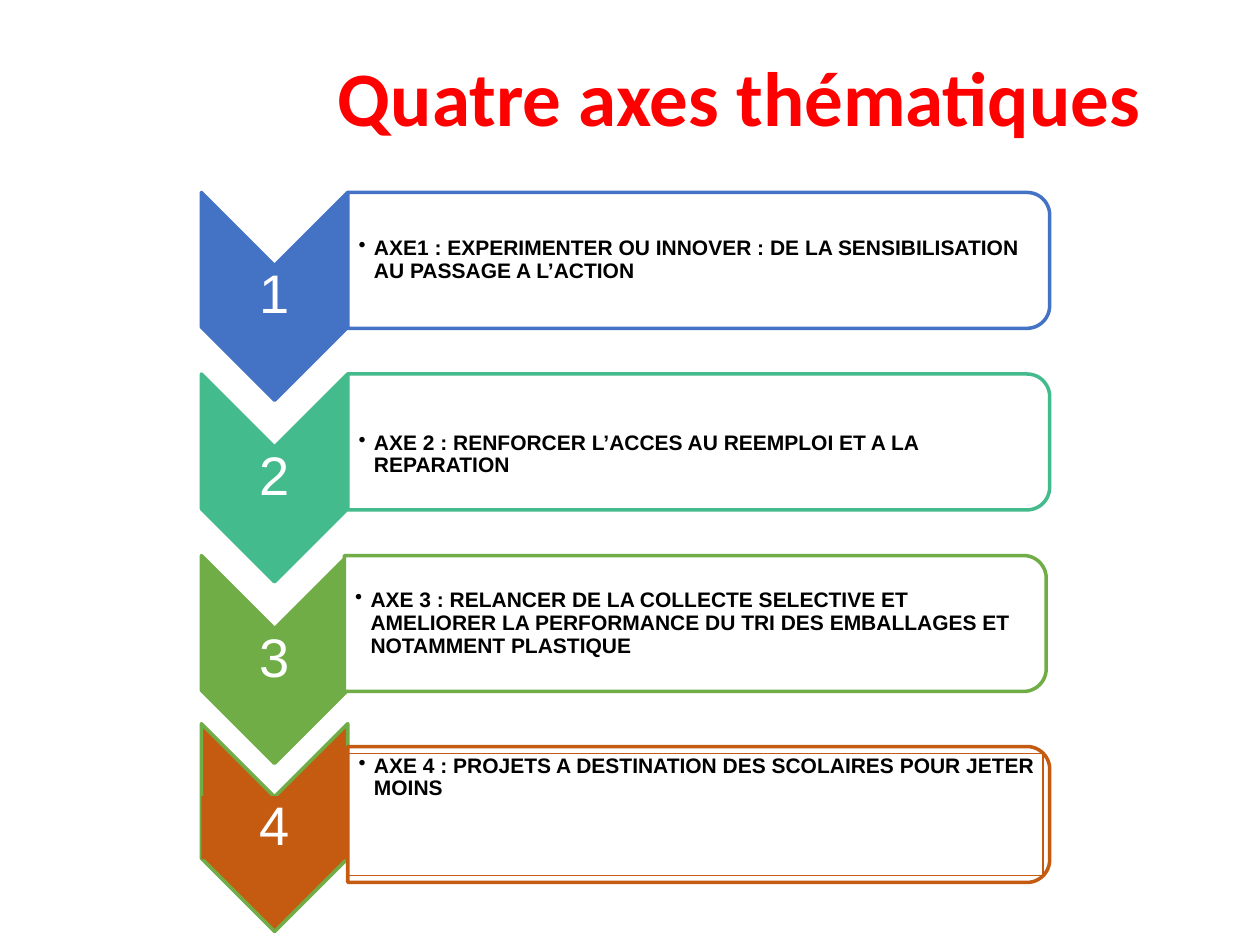
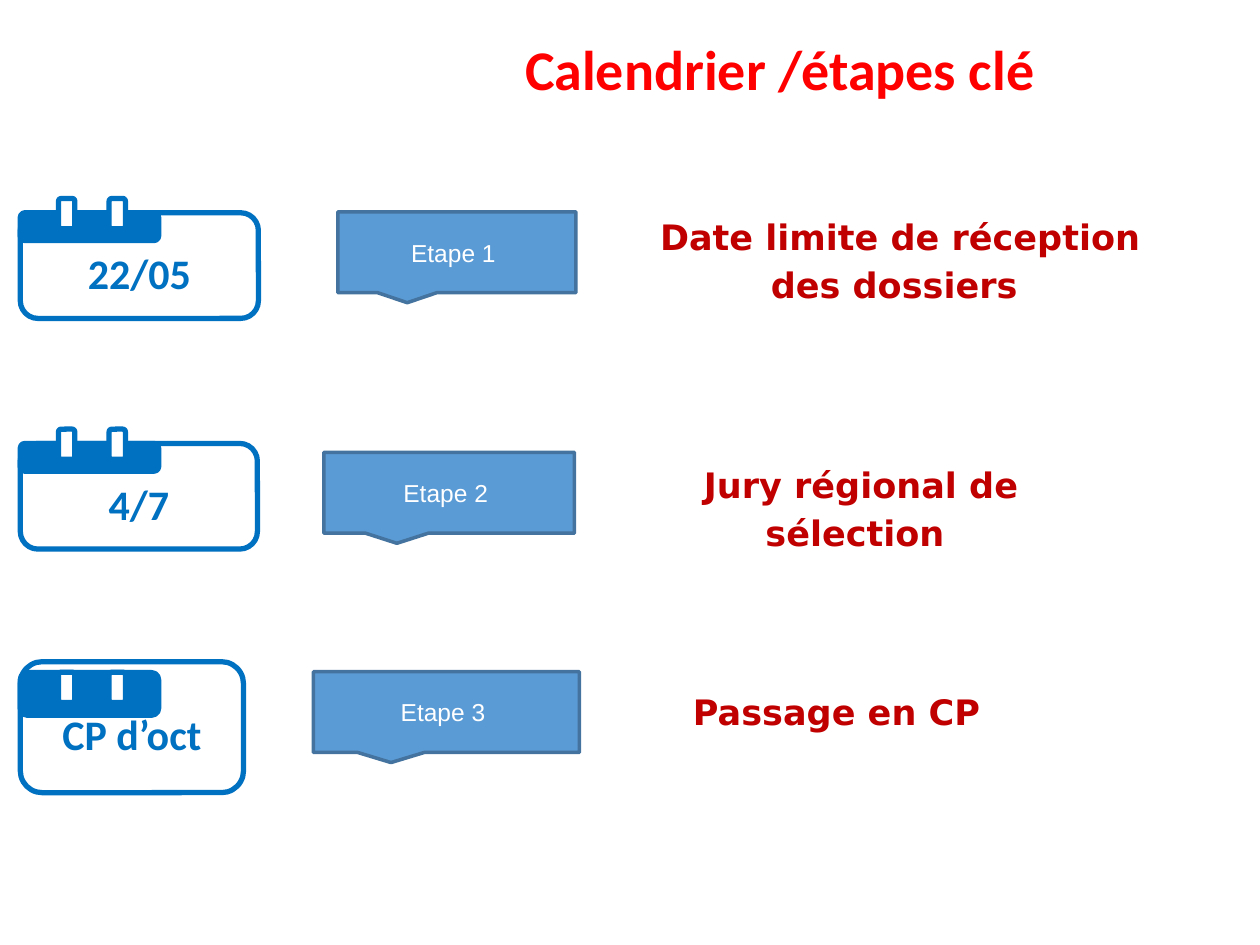
from dataclasses import dataclass
from typing import Optional

from lxml import etree
from pptx import Presentation
from pptx import util as u
from pptx.dml import color as dml
from pptx.enum import shapes, text
from pptx.oxml import ns

COLORS = {
    "title": "FF0000", "white": "FFFFFF", "black": "000000",
    "blue": "4472C4", "teal": "43BB8D", "green": "70AD47", "orange": "C55A11",
    "calendar": "0070C0", "step": "5B9BD5", "step_line": "43739E",
    "description": "C00000",
}
SHAPE = shapes.MSO_SHAPE
LEFT, CENTER = text.PP_ALIGN.LEFT, text.PP_ALIGN.CENTER
TOP, MIDDLE = text.MSO_ANCHOR.TOP, text.MSO_ANCHOR.MIDDLE


@dataclass
class Box:
    """Visible frame, in centimetres."""
    left: float
    top: float
    width: float
    height: float


@dataclass
class Style:
    size: float
    font: str
    color: str
    bold: bool = False
    align: text.PP_ALIGN = CENTER
    anchor: text.MSO_ANCHOR = MIDDLE
    spacing: float = 1.0
    insets: tuple = (0.25, 0.13, 0.25, 0.13)


@dataclass
class Axis:
    number: str
    label: str
    color: str
    outline: str
    chevron_top: float
    card_top: float
    card_left: float = 7.01
    label_anchor: text.MSO_ANCHOR = MIDDLE
    label_inset: float = 0.03
    framed: bool = False


@dataclass
class Step:
    date: str
    name: str
    description: str
    page: Box
    header_top: float
    header_height: float
    tab_top: float
    callout: Box
    description_box: Box
    align: text.PP_ALIGN = CENTER
    spacing: float = 1.15


NUMBER = Style(31, "Arial", "white", spacing=0.9, insets=(0.05,) * 4)
DATE = Style(24, "Calibri", "calendar", True, insets=(0.1, 0.41, 0.1, 0.13))
STEP_NAME = Style(14, "Arial", "white")

FIRST_TOP, PITCH = 3.88, 3.66
TOPS = [FIRST_TOP + PITCH * row for row in range(3)]
AXES = [
    Axis("1", "AXE1 : EXPERIMENTER OU INNOVER : DE LA SENSIBILISATION AU PASSAGE A L’ACTION",
         "blue", "blue", TOPS[0], TOPS[0]),
    Axis("2", "AXE 2 : RENFORCER L’ACCES AU REEMPLOI ET A LA REPARATION",
         "teal", "teal", TOPS[1], TOPS[1], label_inset=0.55),
    Axis("3", "AXE 3 : RELANCER DE LA COLLECTE SELECTIVE ET AMELIORER LA PERFORMANCE "
         "DU TRI DES EMBALLAGES ET NOTAMMENT PLASTIQUE",
         "green", "green", TOPS[2], TOPS[2], card_left=6.94),
    Axis("4", "AXE 4 : PROJETS A DESTINATION DES SCOLAIRES POUR JETER MOINS",
         "orange", "green", 14.59, 15.05, label_anchor=TOP, framed=True),
]
STEPS = [
    Step("22/05", "Etape 1 ", "Date limite de réception des dossiers ",
         Box(0.41, 4.29, 4.8, 2.13), 4.29, 0.56, 4.0,
         Box(6.81, 4.27, 4.8, 1.63), Box(12.27, 4.09, 11.76, 2.13)),
    Step("4/7", "Etape 2 ", "Jury régional de sélection ",
         Box(0.41, 8.94, 4.78, 2.13), 8.94, 0.56, 8.65,
         Box(6.53, 9.12, 5.05, 1.63), Box(12.42, 9.09, 9.88, 2.13)),
    Step("CP d’oct", "Etape 3 ", "Passage en CP",
         Box(0.41, 13.34, 4.5, 2.64), 13.56, 0.86, 13.55,
         Box(6.32, 13.54, 5.36, 1.63), Box(13.72, 13.79, 6.93, 1.12), LEFT, 1.0),
]


def rgb(name: str) -> dml.RGBColor:
    return dml.RGBColor.from_string(COLORS[name])


def write(shape, words: str, style: Style):
    """Fill a shape with one styled paragraph and return the paragraph."""
    frame = shape.text_frame
    frame.word_wrap = True
    frame.vertical_anchor = style.anchor
    (frame.margin_left, frame.margin_top,
     frame.margin_right, frame.margin_bottom) = map(u.Cm, style.insets)
    paragraph = frame.paragraphs[0]
    paragraph.alignment = style.align
    paragraph.line_spacing = style.spacing
    run = paragraph.add_run()
    run.text = words
    run.font.size = u.Pt(style.size)
    run.font.name = style.font
    run.font.bold = style.bold
    run.font.color.rgb = rgb(style.color)
    return paragraph


def add_text(slide, box: Box, words: str, style: Style):
    shape = slide.shapes.add_textbox(
        u.Cm(box.left), u.Cm(box.top), u.Cm(box.width), u.Cm(box.height))
    return write(shape, words, style)


def add_shape(slide, kind, box: Box, fill: Optional[str], line: Optional[str],
              weight: float = 2, rotation: int = 0):
    """Draw a preset shape; quarter turns keep the visible frame."""
    width, height = (box.height, box.width) if rotation else (box.width, box.height)
    left = box.left + (box.width - width) / 2
    top = box.top + (box.height - height) / 2
    shape = slide.shapes.add_shape(kind, u.Cm(left), u.Cm(top), u.Cm(width), u.Cm(height))
    shape.shadow.inherit = False
    shape.rotation = rotation
    if fill:
        shape.fill.solid()
        shape.fill.fore_color.rgb = rgb(fill)
    else:
        shape.fill.background()
    if line:
        shape.line.color.rgb = rgb(line)
        shape.line.width = u.Pt(weight)
    else:
        shape.line.fill.background()
    return shape


def add_bullet(paragraph) -> None:
    properties = paragraph._p.get_or_add_pPr()
    indent = u.Cm(0.31)
    properties.set("marL", str(indent))
    properties.set("indent", str(-indent))
    etree.SubElement(properties, ns.qn("a:buChar"), char="•")


def add_title(slide, box: Box, words: str, size: float) -> None:
    add_text(slide, box, words, Style(size, "Calibri", "title", True, spacing=0.9))


def add_axis(slide, axis: Axis) -> None:
    # Numbered chevron
    add_shape(slide, SHAPE.CHEVRON, Box(4.06, axis.chevron_top, 2.95, 4.19),
              axis.color, axis.outline, rotation=90)
    number = add_shape(slide, SHAPE.RECTANGLE, Box(4.06, axis.chevron_top + 1.46, 2.95, 1.27),
                       axis.color if axis.framed else None, None)
    write(number, axis.number, NUMBER)
    # Card with its label
    add_shape(slide, SHAPE.ROUND_2_SAME_RECTANGLE,
              Box(axis.card_left, axis.card_top, 14.15, 2.74),
              "white", axis.color, rotation=90)
    label = add_shape(slide, SHAPE.RECTANGLE,
                      Box(axis.card_left, axis.card_top + 0.14, 14.02, 2.46),
                      None, axis.color if axis.framed else None, 0.75)
    style = Style(12, "Arial", "black", True, LEFT, axis.label_anchor, 0.9,
                  (0.22, axis.label_inset, 0.03, 0.03))
    add_bullet(write(label, axis.label, style))


def add_step(slide, step: Step) -> None:
    # Calendar page, header and binding tabs
    page = add_shape(slide, SHAPE.ROUNDED_RECTANGLE, step.page, "white", "calendar", 3)
    write(page, step.date, DATE)
    header = Box(step.page.left, step.header_top, 2.79, step.header_height)
    add_shape(slide, SHAPE.ROUNDED_RECTANGLE, header, "calendar", "calendar", 3)
    for tab_left in (1.18, 2.2):
        add_shape(slide, SHAPE.ROUNDED_RECTANGLE, Box(tab_left, step.tab_top, 0.33, 0.61),
                  "white", "calendar", 3, rotation=270)
    # Description and step callout
    add_text(slide, step.description_box, step.description,
             Style(20, "DejaVu Sans", "description", True, step.align, TOP, step.spacing))
    callout = add_shape(slide, SHAPE.RECTANGULAR_CALLOUT, step.callout, "step", "step_line")
    write(callout, step.name, STEP_NAME)


def main() -> None:
    presentation = Presentation()
    presentation.slide_width, presentation.slide_height = u.Cm(25.4), u.Cm(19.05)
    blank = presentation.slide_layouts[6]

    # Themes
    slide = presentation.slides.add_slide(blank)
    add_title(slide, Box(6.22, 0.2, 17.73, 3.68), "Quatre axes thématiques ", 44)
    for axis in AXES:
        add_axis(slide, axis)

    # Calendar
    slide = presentation.slides.add_slide(blank)
    add_title(slide, Box(6.86, 0.25, 17.73, 2.41), "Calendrier /étapes clé", 32)
    for step in STEPS:
        add_step(slide, step)

    presentation.save("out.pptx")


if __name__ == "__main__":
    main()
